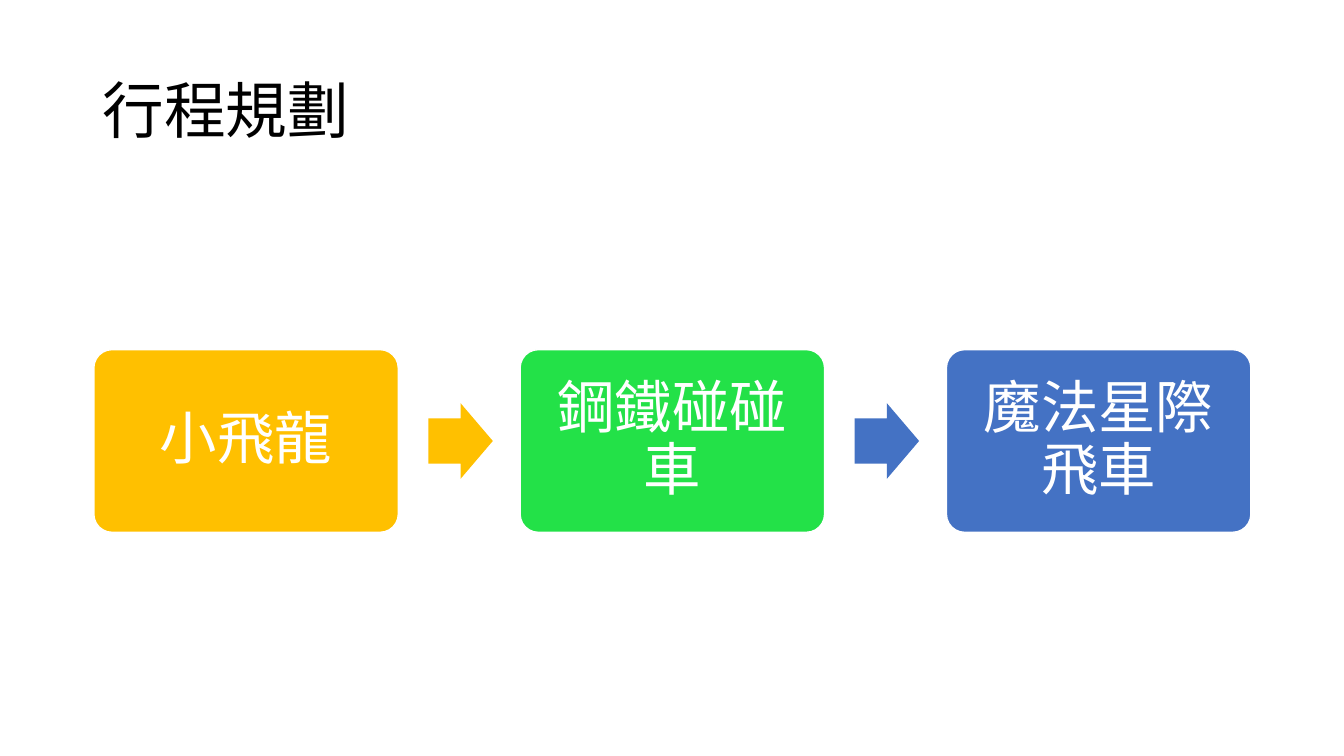
from dataclasses import dataclass

from pptx import Presentation
from pptx.dml.color import RGBColor
from pptx.enum.shapes import MSO_SHAPE as SHAPE
from pptx.enum.text import MSO_ANCHOR as ANCHOR, MSO_AUTO_SIZE as AUTO, PP_ALIGN as ALIGN
from pptx.shapes.autoshape import Shape
from pptx.slide import Slide
from pptx.text.text import TextFrame
from pptx.util import Pt

WHITE = "FFFFFF"
STEP_LEFT, STEP_PITCH = 67, 304.5
STEP_W, STEP_H = 217.5, 130.5
ARROW_OFFSET, ARROW_W, ARROW_H = 239, 46, 54
MIDDLE = 315


@dataclass
class Step:
    name: str
    color: str


STEPS = [
    Step("小飛龍", "FFC000"),
    Step("鋼鐵碰碰車", "23E148"),
    Step("魔法星際飛車", "4472C4"),
]
ARROW_COLORS = ["FFC000", "4472C4"]


def rgb(color: str) -> RGBColor:
    return RGBColor.from_string(color)


def write(tf: TextFrame, text: str, *, size: float, color: str,
          align: ALIGN, inset: float = 7.2) -> None:
    tf.word_wrap = True
    tf.auto_size = AUTO.NONE
    tf.vertical_anchor = ANCHOR.MIDDLE
    tf.margin_left = tf.margin_right = Pt(inset)
    tf.margin_top = tf.margin_bottom = Pt(inset / 2 if inset < 10 else inset)
    p = tf.paragraphs[0]
    p.alignment = align
    p.line_spacing = 0.9
    r = p.add_run()
    r.text = text
    r.font.name = "Calibri"
    r.font.size = Pt(size)
    r.font.color.rgb = rgb(color)


def add_block(s: Slide, kind: SHAPE, left: float, width: float, height: float,
              color: str, adjustments: list[float]) -> Shape:
    sp = s.shapes.add_shape(kind, Pt(left), Pt(MIDDLE - height / 2), Pt(width), Pt(height))
    for i, value in enumerate(adjustments):
        sp.adjustments[i] = value
    sp.shadow.inherit = False
    sp.fill.solid()
    sp.fill.fore_color.rgb = rgb(color)
    sp.line.fill.background()
    return sp


def add_step(s: Slide, step: Step, left: float) -> None:
    sp = add_block(s, SHAPE.ROUNDED_RECTANGLE, left, STEP_W, STEP_H, step.color, [0.1])
    sp.line.color.rgb = rgb(WHITE)
    sp.line.width = Pt(1)
    write(sp.text_frame, step.name, size=41, color=WHITE, align=ALIGN.CENTER, inset=16)


def main() -> None:
    prs = Presentation()
    prs.slide_width, prs.slide_height = Pt(960), Pt(540)
    s = prs.slides.add_slide(prs.slide_layouts[5])

    title = s.shapes.title
    title.left, title.top, title.width, title.height = Pt(66), Pt(28.8), Pt(828), Pt(104.4)
    write(title.text_frame, "行程規劃", size=44, color="000000", align=ALIGN.LEFT)

    for i, step in enumerate(STEPS):
        left = STEP_LEFT + i * STEP_PITCH
        add_step(s, step, left)
        if i < len(ARROW_COLORS):
            add_block(s, SHAPE.RIGHT_ARROW, left + ARROW_OFFSET, ARROW_W, ARROW_H,
                      ARROW_COLORS[i], [0.6, 0.5])

    prs.save("out.pptx")


if __name__ == "__main__":
    main()
